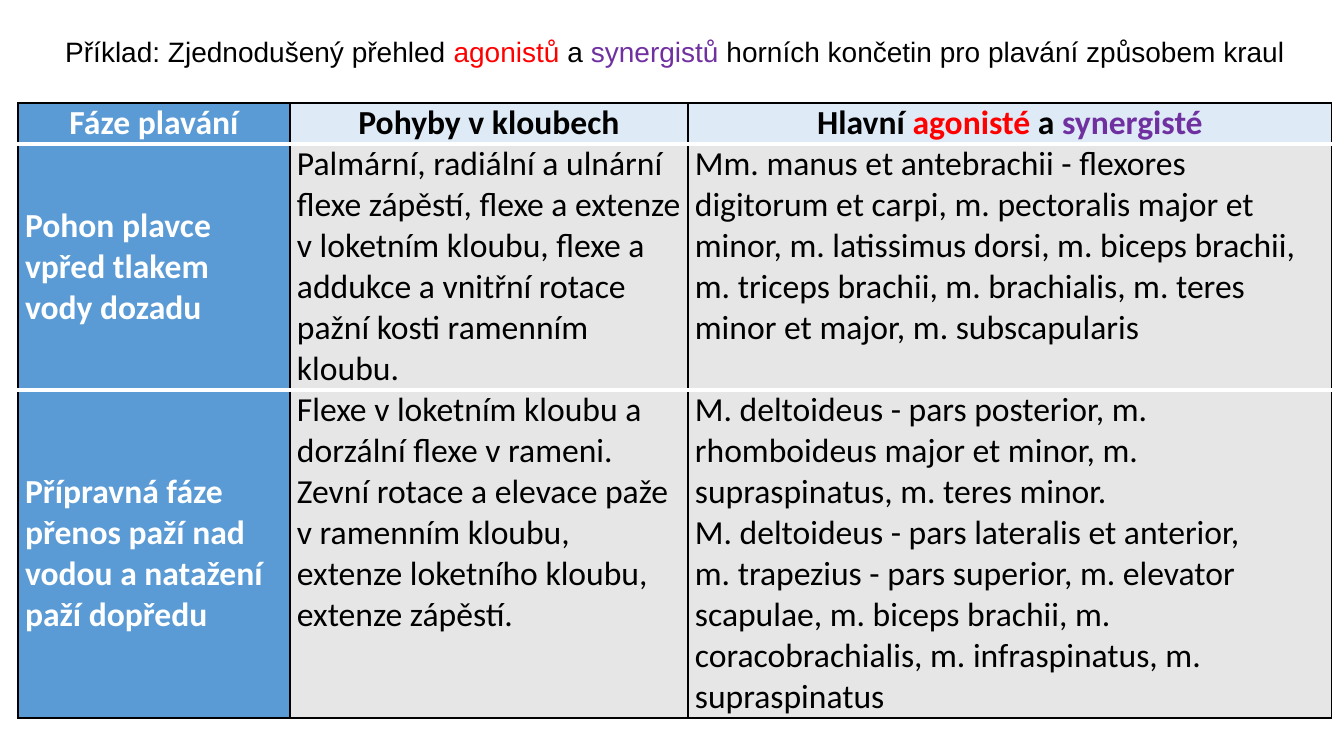
"""Build a slide with a table of the muscles used in the front crawl."""
from lxml import etree
from pptx import Presentation
from pptx.dml.color import RGBColor
from pptx.enum.text import MSO_ANCHOR, PP_ALIGN
from pptx.oxml.ns import qn
from pptx.util import Pt

CENTER, LEFT = PP_ALIGN.CENTER, PP_ALIGN.LEFT
MIDDLE, TOP = MSO_ANCHOR.MIDDLE, MSO_ANCHOR.TOP
PX = 914400 / 100.8
SLIDE = (1344, 756)
COLORS = {
    "black": "000000", "white": "FFFFFF", "red": "FF0000", "purple": "7030A0",
    "blue": "5B9BD5", "pale": "DEEBF7", "gray": "E7E6E6",
}

TITLE = [
    ("Příklad: Zjednodušený přehled ", "black"), ("agonistů", "red"),
    (" a ", "black"), ("synergistů", "purple"),
    (" horních končetin pro plavání způsobem kraul", "black"),
]
HEAD = [
    [("Fáze plavání", "white")],
    [("Pohyby v kloubech", "black")],
    [("Hlavní ", "black"), ("agonisté ", "red"), ("a ", "black"),
     ("synergisté", "purple")],
]
PHASES = [
    (
        ["Pohon plavce vpřed tlakem vody dozadu"],
        ["Palmární, radiální a ulnární flexe zápěstí, flexe a extenze "
         "v loketním kloubu, flexe a addukce a vnitřní rotace pažní kosti "
         "ramenním kloubu."],
        ["Mm. manus et antebrachii - flexores digitorum et carpi, "
         "m. pectoralis major et minor, m. latissimus dorsi, "
         "m. biceps brachii, m. triceps brachii, m. brachialis, "
         "m. teres minor et major, m. subscapularis"],
    ),
    (
        ["Přípravná fáze přenos paží nad vodou a natažení paží dopředu"],
        ["Flexe v loketním kloubu a dorzální flexe v rameni.",
         "Zevní rotace a elevace paže v ramenním kloubu, "
         "extenze loketního kloubu, extenze zápěstí."],
        ["M. deltoideus - pars posterior, m. rhomboideus major et minor, "
         "m. supraspinatus, m. teres minor.",
         "M. deltoideus - pars lateralis et anterior,",
         "m. trapezius - pars superior, m. elevator scapulae, "
         "m. biceps brachii, m. coracobrachialis, m. infraspinatus, "
         "m. supraspinatus"],
    ),
]
TITLE_BOX = (20, 29, 1310, 45)
TABLE_AT = (18, 103)
COLS = (272, 398, 644)
ROWS = (41, 246, 328)


def px(n):
    return round(n * PX)


def rgb(name):
    return RGBColor.from_string(COLORS[name])


def write(frame, paras, font, size, bold, align):
    frame.text = "\n".join("" for _ in paras)
    for para, runs in zip(frame.paragraphs, paras):
        para.alignment = align
        for text, color in runs:
            run = para.add_run()
            run.text = text
            run.font.name = font
            run.font.size = Pt(size)
            run.font.bold = bold
            run.font.color.rgb = rgb(color)


def edge(cell, sides):
    props = cell._tc.get_or_add_tcPr()
    for i, (tag, color, width) in enumerate(sides):
        line = etree.Element(qn(f"a:{tag}"), w=str(Pt(width)))
        fill = etree.SubElement(line, qn("a:solidFill"))
        etree.SubElement(fill, qn("a:srgbClr"), val=COLORS[color])
        props.insert(i, line)


def style(cell, row, col):
    cell.margin_left = cell.margin_right = px(7)
    cell.margin_top = cell.margin_bottom = 0
    side = col == 0
    cell.vertical_anchor = MIDDLE if side and row else TOP
    cell.fill.solid()
    cell.fill.fore_color.rgb = rgb(
        "blue" if side else "gray" if row else "pale")
    outer, inner = ("black", 1), ("white", 3)
    edge(cell, [
        ("lnL", *outer), ("lnR", *outer),
        ("lnT", *(inner if row else outer)),
        ("lnB", *(outer if row == len(ROWS) - 1 else inner)),
    ])


def add_title(slide):
    title = slide.shapes.title
    title.left, title.top, title.width, title.height = map(px, TITLE_BOX)
    frame = title.text_frame
    frame.word_wrap = True
    frame.vertical_anchor = MIDDLE
    write(frame, [TITLE], "Arial", 20, False, CENTER)


def add_grid(slide):
    box = (*TABLE_AT, sum(COLS), sum(ROWS))
    table = slide.shapes.add_table(
        len(ROWS), len(COLS), *map(px, box)).table
    table.first_row = table.horz_banding = False
    for col, width in zip(table.columns, COLS):
        col.width = px(width)
    for row, height in zip(table.rows, ROWS):
        row.height = px(height)
    for c, runs in enumerate(HEAD):
        cell = table.cell(0, c)
        write(cell.text_frame, [runs], "Calibri", 24, True, CENTER)
        style(cell, 0, c)
    for r, phase in enumerate(PHASES, 1):
        for c, lines in enumerate(phase):
            cell = table.cell(r, c)
            color = "black" if c else "white"
            paras = [[(line, color)] for line in lines]
            write(cell.text_frame, paras, "Calibri", 24, c == 0, LEFT)
            style(cell, r, c)


def main():
    deck = Presentation()
    deck.slide_width, deck.slide_height = map(px, SLIDE)
    slide = deck.slides.add_slide(deck.slide_layouts[5])
    add_title(slide)
    add_grid(slide)
    deck.save("out.pptx")


if __name__ == "__main__":
    main()
